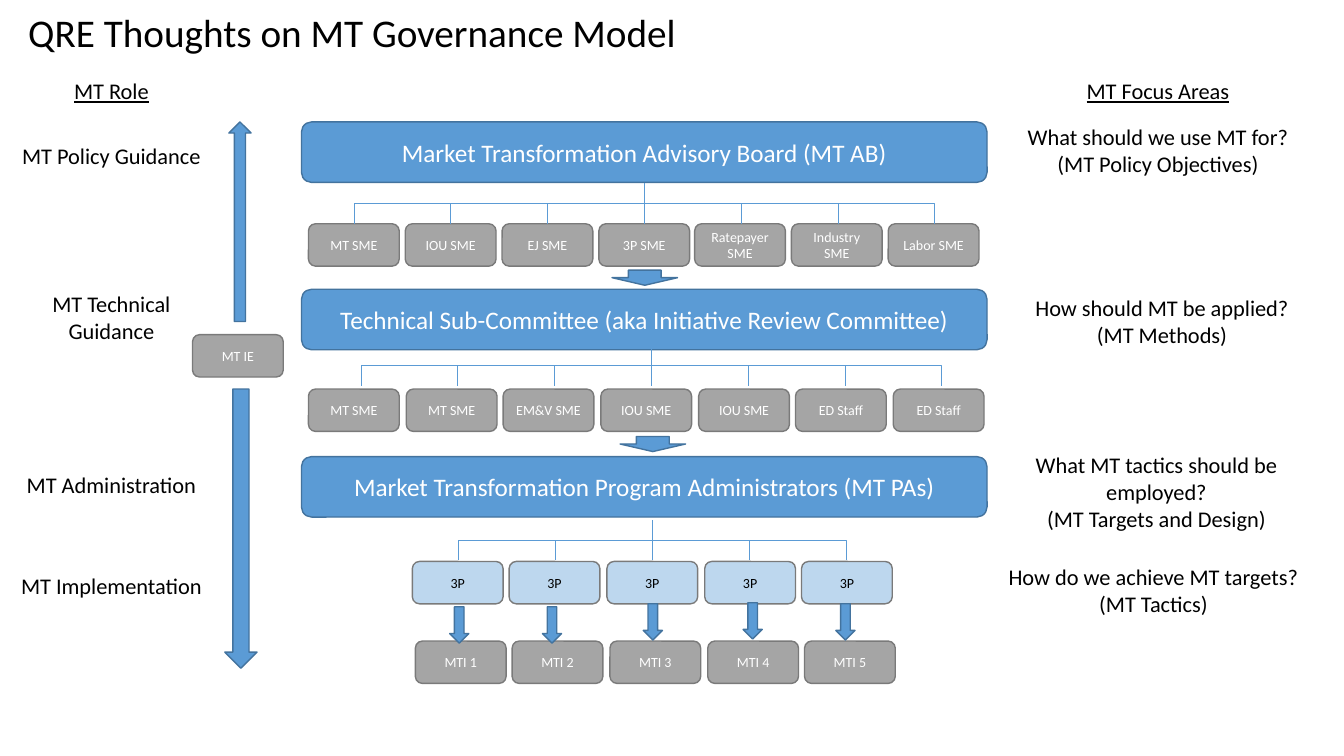
from dataclasses import dataclass

from lxml.etree import SubElement
from pptx import Presentation
from pptx.dml.color import RGBColor
from pptx.enum.shapes import MSO_CONNECTOR as Connector, MSO_SHAPE as Preset
from pptx.enum.text import MSO_ANCHOR as Anchor, MSO_AUTO_SIZE as AutoSize, PP_ALIGN as Align
from pptx.oxml.ns import qn
from pptx.util import Emu, Pt

EMU_PER_PX = 9144
FONT = "Calibri"
BLUE, BLUE_EDGE = "5B9BD5", "43739E"
GRAY, GRAY_EDGE = "A5A5A5", "7A7A7A"
PALE_BLUE, BLACK, WHITE = "BDD7EE", "000000", "FFFFFF"
BOX_WIDTH, BOX_HEIGHT = 90, 42
BRANCH_PITCH, BRANCH_HEIGHT = 96, 40


@dataclass(frozen=True)
class Box:
    left: int
    top: int
    width: int
    height: int


@dataclass(frozen=True)
class Label:
    text: str
    box: Box
    underline: bool = False


@dataclass(frozen=True)
class BoxRow:
    names: tuple[str, ...]
    left: int
    last_left: int
    top: int
    fill: str = GRAY
    ink: str = WHITE


@dataclass(frozen=True)
class Tree:
    hub: int
    top: int
    reach: int


@dataclass(frozen=True)
class Arrow:
    box: Box
    preset: Preset = Preset.DOWN_ARROW


BANDS = (
    ("Market Transformation Advisory Board (MT AB)", 121),
    ("Technical Sub-Committee (aka Initiative Review Committee)", 287),
    ("Market Transformation Program Administrators (MT PAs)", 453),
)

BOX_ROWS = (
    BoxRow(("MT SME", "IOU SME", "EJ SME", "3P SME", "Ratepayer SME", "Industry SME", "Labor SME"),
           306, 881, 222),
    BoxRow(("MT SME", "MT SME", "EM&V SME", "IOU SME", "IOU SME", "ED Staff", "ED Staff"),
           306, 886, 386),
    BoxRow(("MTI 1", "MTI 2", "MTI 3", "MTI 4", "MTI 5"), 412, 798, 636),
    BoxRow(("3P",) * 5, 409, 795, 557, PALE_BLUE, BLACK),
    BoxRow(("MT IE",), 191, 191, 332),
)

TREES = (Tree(639, 182, 3), Tree(646, 343, 3), Tree(647, 516, 2))

ARROWS = (
    *(Arrow(Box(left, top, 19, 36))
      for left, top in ((446, 602), (538, 602), (638, 599), (737, 598), (829, 599))),
    Arrow(Box(223, 386, 32, 277)),
    Arrow(Box(227, 121, 22, 198), Preset.UP_ARROW),
    Arrow(Box(615, 433, 65, 15)),
    Arrow(Box(607, 268, 65, 15)),
)

LABELS = (
    Label("MT Role", Box(2, 72, 217, 37), True),
    Label("MT Policy Guidance", Box(2, 136, 217, 37)),
    Label("MT Technical Guidance", Box(2, 283, 217, 64)),
    Label("MT Administration", Box(2, 462, 217, 37)),
    Label("MT Implementation", Box(2, 563, 217, 37)),
    Label("MT Focus Areas", Box(1026, 72, 245, 37), True),
    Label("What should we use MT for?\n(MT Policy Objectives)", Box(1008, 117, 281, 64)),
    Label("How should MT be applied?\n(MT Methods)", Box(1012, 287, 281, 64)),
    Label("What MT tactics should be employed?\n(MT Targets and Design)", Box(987, 443, 320, 91)),
    Label("How do we achieve MT targets?\n(MT Tactics)", Box(984, 554, 320, 64)),
)


def px(length: int) -> Emu:
    return Emu(length * EMU_PER_PX)


def place(box: Box) -> tuple[Emu, Emu, Emu, Emu]:
    return px(box.left), px(box.top), px(box.width), px(box.height)


def paint(color_format, color: str) -> None:
    color_format.rgb = RGBColor.from_string(color)


def write(frame, text: str, size: int, color: str, align=Align.CENTER, underline=None) -> None:
    frame.text = text
    frame.word_wrap = True
    for paragraph in frame.paragraphs:
        paragraph.alignment = align
        paragraph.font.name = FONT
        paragraph.font.size = Pt(size)
        paragraph.font.underline = underline
        paint(paragraph.font.color, color)


def draw_shape(slide, preset: Preset, box: Box, fill: str, edge: str):
    shape = slide.shapes.add_shape(preset, *place(box))
    shape.shadow.inherit = False
    shape.fill.solid()
    paint(shape.fill.fore_color, fill)
    paint(shape.line.color, edge)
    shape.line.width = Pt(1)
    return shape


def draw_rounded(slide, box: Box, text: str, size: int, fill: str, edge: str, ink: str) -> None:
    frame = draw_shape(slide, Preset.ROUNDED_RECTANGLE, box, fill, edge).text_frame
    frame.vertical_anchor = Anchor.MIDDLE
    write(frame, text, size, ink)


def draw_row(slide, row: BoxRow) -> None:
    gaps = max(len(row.names) - 1, 1)
    for index, name in enumerate(row.names):
        left = row.left + round(index * (row.last_left - row.left) / gaps)
        box = Box(left, row.top, BOX_WIDTH, BOX_HEIGHT)
        draw_rounded(slide, box, name, 10, row.fill, GRAY_EDGE, row.ink)


def draw_branch(slide, hub: int, top: int, offset: int) -> None:
    drop, run = BRANCH_HEIGHT, abs(offset)
    left = hub + (offset - drop) // 2
    upper = top + (drop - run) // 2
    goes_left = offset < 0
    start, end = (left, left + drop) if goes_left else (left + drop, left)
    connector = slide.shapes.add_connector(
        Connector.ELBOW, px(start), px(upper), px(end), px(upper + run))
    paint(connector.line.color, BLUE)
    connector.line.width = Pt(0.5)
    properties = connector.element.spPr
    properties.find(qn("a:xfrm")).set("rot", str((90 if goes_left else 270) * 60000))
    SubElement(properties, qn("a:effectLst"))


def draw_tree(slide, tree: Tree) -> None:
    for step in range(-tree.reach, tree.reach + 1):
        draw_branch(slide, tree.hub, tree.top, step * BRANCH_PITCH)


def draw_label(slide, label: Label) -> None:
    frame = slide.shapes.add_textbox(*place(label.box)).text_frame
    write(frame, label.text, 16, BLACK, underline=label.underline or None)


def draw_title(slide, text: str) -> None:
    title = slide.shapes.title
    title.left, title.top, title.width, title.height = place(Box(18, 0, 1291, 61))
    frame = title.text_frame
    write(frame, text, 28, BLACK, Align.LEFT)
    frame.auto_size = AutoSize.NONE
    frame.vertical_anchor = Anchor.BOTTOM
    frame.paragraphs[0].line_spacing = 0.9


def main() -> None:
    presentation = Presentation()
    presentation.slide_width, presentation.slide_height = px(1333), px(750)
    slide = presentation.slides.add_slide(presentation.slide_layouts[5])
    draw_title(slide, "QRE Thoughts on MT Governance Model")
    for text, top in BANDS:
        draw_rounded(slide, Box(299, top, 680, 60), text, 18, BLUE, BLUE_EDGE, WHITE)
    for row in BOX_ROWS:
        draw_row(slide, row)
    for tree in TREES:
        draw_tree(slide, tree)
    for arrow in ARROWS:
        draw_shape(slide, arrow.preset, arrow.box, BLUE, BLUE_EDGE)
    for label in LABELS:
        draw_label(slide, label)
    presentation.save("out.pptx")


if __name__ == "__main__":
    main()
